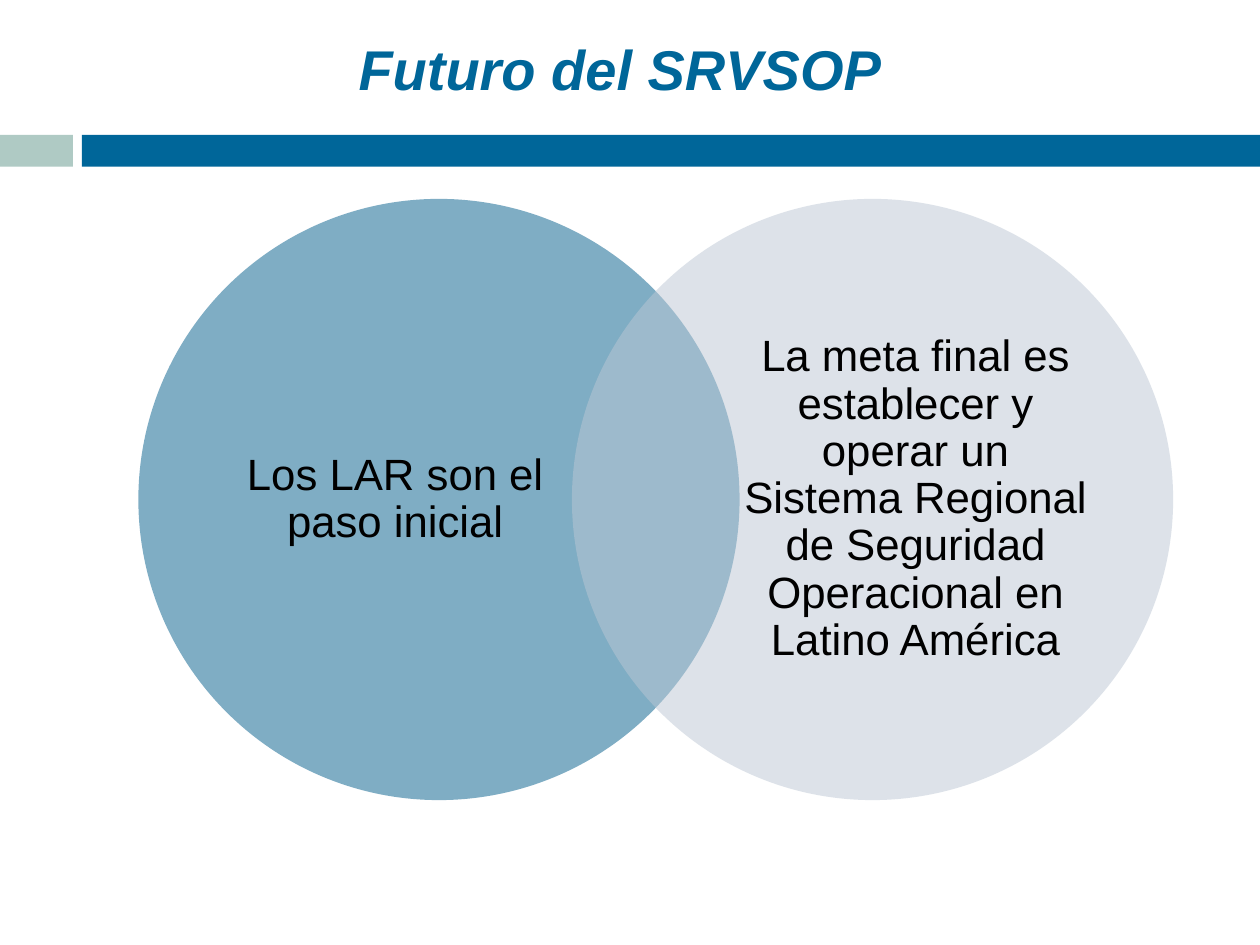
from dataclasses import dataclass

from lxml.etree import SubElement
from pptx import Presentation
from pptx.dml.color import RGBColor
from pptx.enum.shapes import MSO_SHAPE as Preset
from pptx.enum.text import MSO_ANCHOR as Anchor, PP_ALIGN as Align
from pptx.oxml.ns import qn
from pptx.util import Cm, Pt


@dataclass(frozen=True)
class Theme:
    font: str = "Arial"
    accent: str = "006699"
    sage: str = "AFCAC4"
    ocean: str = "005D8B"
    mist: str = "BCC7D4"
    ink: str = "000000"
    title_size: int = 32
    body_size: int = 25
    circle_opacity: int = 50


@dataclass(frozen=True)
class Area:
    left: float
    top: float
    width: float
    height: float

    def lengths(self) -> list[Cm]:
        return [Cm(value) for value in (self.left, self.top, self.width, self.height)]


@dataclass(frozen=True)
class Band:
    left: float
    width: float
    color: str


@dataclass(frozen=True)
class Circle:
    left: float
    text_left: float
    color: str
    text: str


THEME = Theme()
BAND_TOP, BAND_HEIGHT = 2.72, 0.64
CIRCLE_TOP, DIAMETER = 4.01, 12.12
TEXT_WIDTH, TEXT_HEIGHT = 6.99, 9.27
TEXT_TOP = CIRCLE_TOP + (DIAMETER - TEXT_HEIGHT) / 2

BANDS = [Band(0, 1.47, THEME.sage), Band(1.65, 23.75, THEME.accent)]
CIRCLES = [
    Circle(2.79, 4.47, THEME.ocean, "Los LAR son el paso inicial"),
    Circle(11.53, 14.96, THEME.mist,
           "La meta final es establecer y operar un Sistema Regional "
           "de Seguridad Operacional en Latino América"),
]


def add_filled(page, preset: Preset, area: Area, color: str, opacity: int = 100) -> None:
    shape = page.shapes.add_shape(preset, *area.lengths())
    shape.shadow.inherit = False
    shape.line.fill.background()
    shape.fill.solid()
    shape.fill.fore_color.rgb = RGBColor.from_string(color)
    if opacity < 100:
        tint = shape.fill._xPr.find(qn("a:solidFill"))[0]
        SubElement(tint, qn("a:alpha"), val=str(opacity * 1000))


def add_text(page, area: Area, text: str, size: int, color: str,
             emphasis: bool = False, spacing: float = 1.0) -> None:
    frame = page.shapes.add_textbox(*area.lengths()).text_frame
    frame.word_wrap = True
    frame.vertical_anchor = Anchor.MIDDLE
    frame.margin_left = frame.margin_right = frame.margin_top = frame.margin_bottom = 0
    para = frame.paragraphs[0]
    para.text = text
    para.alignment = Align.CENTER
    para.line_spacing = spacing
    para.font.name = THEME.font
    para.font.size = Pt(size)
    para.font.bold = para.font.italic = emphasis
    para.font.color.rgb = RGBColor.from_string(color)


def add_circle(page, circle: Circle) -> None:
    add_filled(page, Preset.OVAL, Area(circle.left, CIRCLE_TOP, DIAMETER, DIAMETER),
               circle.color, THEME.circle_opacity)
    add_text(page, Area(circle.text_left, TEXT_TOP, TEXT_WIDTH, TEXT_HEIGHT),
             circle.text, THEME.body_size, THEME.ink, spacing=0.9)


def main() -> None:
    deck = Presentation()
    deck.slide_width, deck.slide_height = Cm(25.4), Cm(19.05)
    page = deck.slides.add_slide(deck.slide_layouts[6])
    for band in BANDS:
        add_filled(page, Preset.RECTANGLE,
                   Area(band.left, BAND_TOP, band.width, BAND_HEIGHT), band.color)
    add_text(page, Area(0.69, 0.53, 23.9, 1.68), "Futuro del SRVSOP ",
             THEME.title_size, THEME.accent, emphasis=True)
    for circle in CIRCLES:
        add_circle(page, circle)
    deck.save("out.pptx")


if __name__ == "__main__":
    main()
